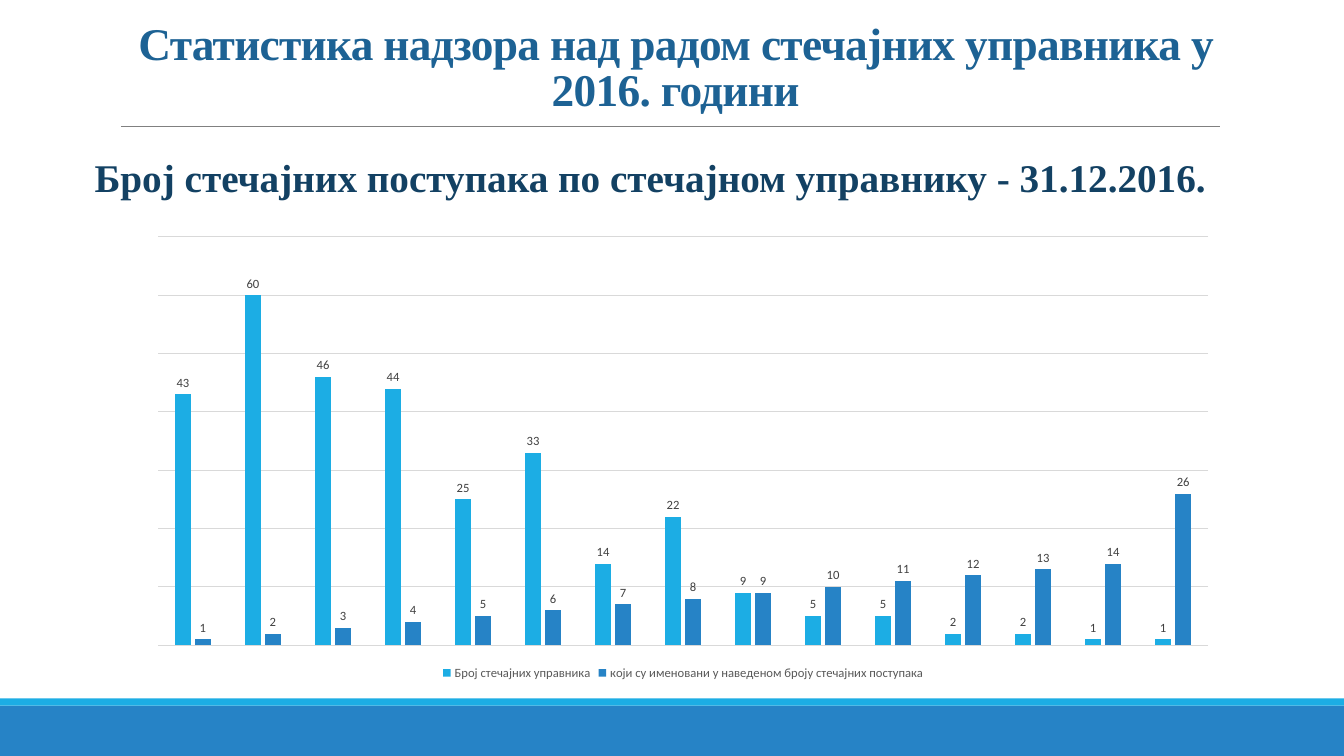
from dataclasses import dataclass

from pptx import Presentation
from pptx.chart.data import CategoryChartData
from pptx.dml.color import RGBColor
from pptx.enum.chart import XL_CHART_TYPE as ChartType
from pptx.enum.chart import XL_LABEL_POSITION as LabelPosition
from pptx.enum.chart import XL_LEGEND_POSITION as LegendPosition
from pptx.enum.shapes import MSO_CONNECTOR, MSO_SHAPE
from pptx.enum.text import MSO_ANCHOR, MSO_AUTO_SIZE, PP_ALIGN
from pptx.oxml.ns import qn
from pptx.util import Inches, Pt


@dataclass(frozen=True)
class Theme:
    title: str = "1D6294"
    subtitle: str = "134163"
    light_blue: str = "1CADE4"
    blue: str = "2683C6"
    rule: str = "808080"
    grid: str = "D9D9D9"
    legend: str = "595959"
    label: str = "404040"
    heading_font: str = "Times New Roman"
    chart_font: str = "Calibri"
    title_size: float = 32.4
    subtitle_size: float = 28
    chart_size: float = 9


THEME = Theme()
SLIDE_WIDTH, SLIDE_HEIGHT = 13.33, 7.5

TITLE = "Статистика надзора над радом стечајних управника у 2016. години"
SUBTITLE = "Број стечајних поступака по стечајном управнику - 31.12.2016."
SERIES = [
    ("Број стечајних управника", THEME.light_blue,
     [43, 60, 46, 44, 25, 33, 14, 22, 9, 5, 5, 2, 2, 1, 1]),
    ("који су именовани у наведеном броју стечајних поступака", THEME.blue,
     [*range(1, 15), 26]),
]


def color(value):
    return RGBColor.from_string(value)


def inches(box):
    return [Inches(length) for length in box]


def style_font(font, name, size, value, bold=False):
    font.name = name
    font.size = Pt(size)
    font.color.rgb = color(value)
    font.bold = bold


def add_band(page, box, fill):
    band = page.shapes.add_shape(MSO_SHAPE.RECTANGLE, *inches(box))
    band.shadow.inherit = False
    band.fill.solid()
    band.fill.fore_color.rgb = color(fill)
    band.line.fill.background()


def add_footer(page, box):
    left, top, width, height = box
    stripe = 0.07
    add_band(page, (left, top + stripe, width, height - stripe), THEME.blue)
    add_band(page, (left, top, width, stripe), THEME.light_blue)


def add_rule(page, left, top, width):
    rule = page.shapes.add_connector(
        MSO_CONNECTOR.STRAIGHT, *inches((left, top, left + width, top)))
    rule.line.color.rgb = color(THEME.rule)
    rule.line.width = Pt(0.5)
    properties = rule._element.spPr
    properties.append(properties.makeelement(qn("a:effectLst"), {}))


def fill_title(page, box):
    title = page.shapes.title
    title.left, title.top, title.width, title.height = inches(box)
    frame = title.text_frame
    frame.text = TITLE
    frame.word_wrap = True
    frame.auto_size = MSO_AUTO_SIZE.NONE
    frame.vertical_anchor = MSO_ANCHOR.BOTTOM
    frame.margin_bottom = Inches(0.75)
    para = frame.paragraphs[0]
    para.alignment = PP_ALIGN.CENTER
    para.line_spacing = 0.85
    style_font(para.font, THEME.heading_font, THEME.title_size, THEME.title, True)
    para.runs[0].font._element.set("spc", "-50")


def add_subtitle(page, box):
    frame = page.shapes.add_textbox(*inches(box)).text_frame
    frame.word_wrap = True
    frame.margin_left, frame.margin_right = Inches(0.1), 0
    frame.text = SUBTITLE
    para = frame.paragraphs[0]
    para.line_spacing = 0.9
    style_font(para.font, THEME.heading_font, THEME.subtitle_size, THEME.subtitle, True)


def style_series(series, fill):
    series.format.fill.solid()
    series.format.fill.fore_color.rgb = color(fill)
    labels = series.data_labels
    labels.show_value = True
    labels.position = LabelPosition.OUTSIDE_END
    style_font(labels.font, THEME.chart_font, THEME.chart_size, THEME.label)


def add_column_chart(page, box):
    data = CategoryChartData()
    data.categories = [str(number) for number in range(1, 16)]
    for name, _, values in SERIES:
        data.add_series(name, values)
    chart = page.shapes.add_chart(
        ChartType.COLUMN_CLUSTERED, *inches(box), data).chart
    style_font(chart.font, THEME.chart_font, THEME.chart_size, THEME.legend)
    chart.has_title = False

    chart.has_legend = True
    chart.legend.position = LegendPosition.BOTTOM
    chart.legend.include_in_layout = False
    style_font(chart.legend.font, THEME.chart_font, THEME.chart_size, THEME.legend)

    chart.category_axis.visible = False
    axis = chart.value_axis
    axis.visible = False
    axis.minimum_scale, axis.maximum_scale, axis.major_unit = 0, 70, 10
    grid = axis.major_gridlines.format.line
    grid.color.rgb = color(THEME.grid)
    grid.width = Pt(0.75)

    plot = chart.plots[0]
    plot.gap_width = 219
    plot.overlap = -27
    plot.vary_by_categories = False
    for series, (_, fill, _) in zip(plot.series, SERIES):
        style_series(series, fill)


def build_statistics_page(deck):
    page = deck.slides.add_slide(deck.slide_layouts[5])
    add_footer(page, (0, 6.93, SLIDE_WIDTH, SLIDE_HEIGHT - 6.93))
    add_rule(page, 1.2, 1.25, 10.9)
    fill_title(page, (1.2, 0.31, 11, 1.59))
    add_subtitle(page, (0.84, 1.52, 11.54, 1.22))
    add_column_chart(page, (1.35, 2.26, 10.85, 4.53))


def main():
    deck = Presentation()
    deck.slide_width, deck.slide_height = inches((SLIDE_WIDTH, SLIDE_HEIGHT))
    build_statistics_page(deck)
    deck.save("out.pptx")


if __name__ == "__main__":
    main()
